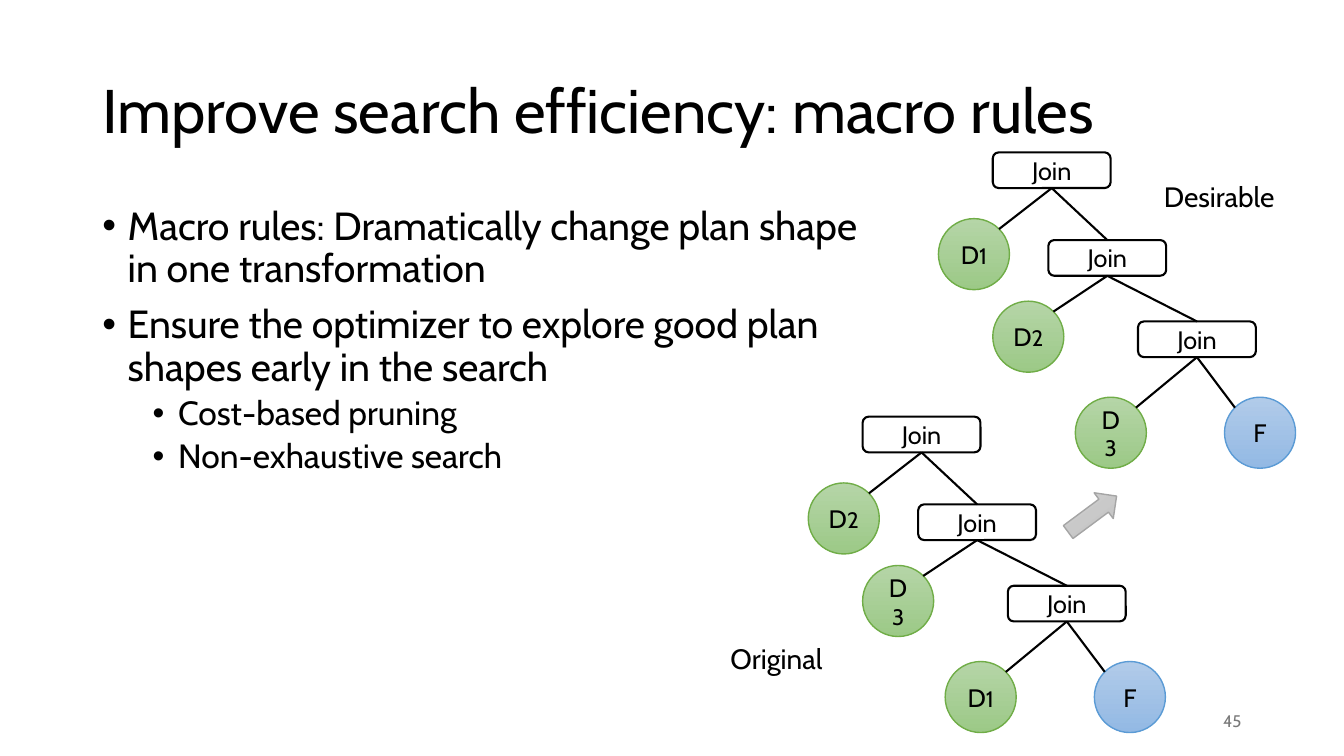
from dataclasses import dataclass
from math import sqrt

from lxml import etree
from pptx import Presentation
from pptx.dml.color import RGBColor
from pptx.enum.shapes import MSO_CONNECTOR, MSO_SHAPE
from pptx.enum.text import MSO_ANCHOR, MSO_AUTO_SIZE, PP_ALIGN
from pptx.oxml.ns import qn
from pptx.util import Cm, Pt

FONT = "Cabin"
BLACK = RGBColor(0x00, 0x00, 0x00)
WHITE = RGBColor(0xFF, 0xFF, 0xFF)
NUMBER_GRAY = RGBColor(0x79, 0x79, 0x79)

LEFT, CENTER, RIGHT = PP_ALIGN.LEFT, PP_ALIGN.CENTER, PP_ALIGN.RIGHT
TOP, MIDDLE = MSO_ANCHOR.TOP, MSO_ANCHOR.MIDDLE
NO_FIT = MSO_AUTO_SIZE.NONE
ROUNDED, CIRCLE = MSO_SHAPE.ROUNDED_RECTANGLE, MSO_SHAPE.FLOWCHART_CONNECTOR
ARROW, STRAIGHT = MSO_SHAPE.RIGHT_ARROW, MSO_CONNECTOR.STRAIGHT


@dataclass(frozen=True)
class Tone:
    top: RGBColor
    bottom: RGBColor
    line: RGBColor


@dataclass(frozen=True)
class Tree:
    dx: float
    dy: float
    leaves: tuple[str, ...]


@dataclass(frozen=True)
class Bullet:
    text: str
    size: int
    indent: float
    before: int


@dataclass(frozen=True)
class Label:
    text: str
    left: float
    top: float
    width: float


GREEN = Tone(RGBColor(0xB5, 0xD5, 0xA7), RGBColor(0x9C, 0xC9, 0x87), RGBColor(0x70, 0xAD, 0x47))
BLUE = Tone(RGBColor(0xB1, 0xCB, 0xE9), RGBColor(0x93, 0xB9, 0xE4), RGBColor(0x5B, 0x9B, 0xD5))
GRAY = Tone(RGBColor(0xD2, 0xD2, 0xD2), RGBColor(0xC0, 0xC0, 0xC0), RGBColor(0xA5, 0xA5, 0xA5))

# Tree geometry in cm; both trees share it, shifted by dx and dy
JOIN_W, JOIN_H, LEAF_D = 2.97, 0.9, 1.79
JOINS = ((25.02, 3.84), (26.42, 6.05), (28.68, 8.1))
LEAVES = ((23.65, 5.51), (25.02, 7.59), (27.1, 10.01), (30.86, 10.01))
LEAF_PARENTS = (0, 1, 2, 2)

TREES = (
    Tree(0, 0, ("D1", "D2", "D3", "F")),
    Tree(-3.28, 6.66, ("D2", "D3", "D1", "F")),
)
BULLETS = (
    Bullet("Macro rules: Dramatically change plan shape in one transformation", 28, 0.64, 10),
    Bullet("Ensure the optimizer to explore good plan shapes early in the search", 28, 0.64, 10),
    Bullet("Cost-based pruning", 24, 1.91, 5),
    Bullet("Non-exhaustive search", 24, 1.91, 5),
)
LABELS = (Label("Desirable", 29.08, 4.39, 3.45), Label("Original", 18.16, 16.03, 2.92))


def add_run(p, text: str, size: int, color: RGBColor = BLACK) -> None:
    r = p.add_run()
    r.text = text
    r.font.name = FONT
    r.font.size = Pt(size)
    r.font.color.rgb = color


def add_text_box(slide, left: float, top: float, width: float, height: float,
                 anchor=TOP, wrap: bool = True):
    tf = slide.shapes.add_textbox(Cm(left), Cm(top), Cm(width), Cm(height)).text_frame
    tf.word_wrap = wrap
    tf.vertical_anchor = anchor
    return tf


def add_bullet(p, bullet: Bullet) -> None:
    p.line_spacing = 0.9
    p.space_before = Pt(bullet.before)
    pPr = p._p.get_or_add_pPr()
    pPr.set("marL", str(Cm(bullet.indent)))
    pPr.set("indent", str(-Cm(0.64)))
    etree.SubElement(pPr, qn("a:buFont")).set("typeface", "Arial")
    etree.SubElement(pPr, qn("a:buChar")).set("char", "•")
    add_run(p, bullet.text, bullet.size)


def add_toned_shape(slide, kind, left: float, top: float, width: float, height: float, tone: Tone):
    sp = slide.shapes.add_shape(kind, Cm(left), Cm(top), Cm(width), Cm(height))
    sp.shadow.inherit = False
    sp.fill.gradient()
    sp.fill.gradient_angle = 270
    for stop, color in zip(sp.fill.gradient_stops, (tone.top, tone.bottom)):
        stop.color.rgb = color
    sp.line.color.rgb = tone.line
    sp.line.width = Pt(1)
    return sp


def add_join(slide, left: float, top: float) -> None:
    sp = slide.shapes.add_shape(ROUNDED, Cm(left), Cm(top), Cm(JOIN_W), Cm(JOIN_H))
    sp.shadow.inherit = False
    sp.fill.solid()
    sp.fill.fore_color.rgb = WHITE
    sp.line.color.rgb = BLACK
    sp.line.width = Pt(1.5)
    tf = sp.text_frame
    tf.vertical_anchor = MIDDLE
    p = tf.paragraphs[0]
    p.alignment = CENTER
    add_run(p, "Join", 18)


def add_leaf(slide, left: float, top: float, name: str) -> None:
    sp = add_toned_shape(slide, CIRCLE, left, top, LEAF_D, LEAF_D, BLUE if name == "F" else GREEN)
    tf = sp.text_frame
    tf.vertical_anchor = MIDDLE
    tf.word_wrap = name == "D3"  # only this label breaks over two lines
    tf.margin_left = tf.margin_right = Cm(0.3)
    p = tf.paragraphs[0]
    p.alignment = CENTER
    add_run(p, name[0], 18)
    if name[1:]:
        add_run(p, name[1:], 16)


def add_edge(slide, x1: float, y1: float, x2: float, y2: float) -> None:
    line = slide.shapes.add_connector(STRAIGHT, Cm(x1), Cm(y1), Cm(x2), Cm(y2))
    line.line.color.rgb = BLACK
    line.line.width = Pt(1.5)
    etree.SubElement(line._element.spPr, qn("a:effectLst"))


def add_tree(slide, tree: Tree) -> None:
    joins = [(x + tree.dx, y + tree.dy) for x, y in JOINS]
    leaves = [(x + tree.dx, y + tree.dy) for x, y in LEAVES]
    for x, y in joins:
        add_join(slide, x, y)
    for (x, y), name in zip(leaves, tree.leaves):
        add_leaf(slide, x, y, name)

    # Edges leave the middle of a join's lower side
    exits = [(x + JOIN_W / 2, y + JOIN_H) for x, y in joins]
    for start, (x, y) in zip(exits, joins[1:]):
        add_edge(slide, *start, x + JOIN_W / 2, y)
    reach = LEAF_D / 2 / sqrt(2)  # leaves are met at 45 degrees
    for parent, (x, y) in zip(LEAF_PARENTS, leaves):
        start = exits[parent]
        cx, cy = x + LEAF_D / 2, y + LEAF_D / 2
        side = reach if cx < start[0] else -reach
        add_edge(slide, *start, cx + side, cy - reach)


def main() -> None:
    prs = Presentation()
    prs.slide_width, prs.slide_height = Cm(33.87), Cm(19.05)
    slide = prs.slides.add_slide(prs.slide_layouts[5])

    # Title
    title = slide.shapes.title
    title.left, title.top, title.width, title.height = Cm(2.33), Cm(1.01), Cm(29.21), Cm(3.68)
    tf = title.text_frame
    tf.auto_size = NO_FIT
    tf.vertical_anchor = MIDDLE
    p = tf.paragraphs[0]
    p.alignment = LEFT
    p.line_spacing = 0.9
    add_run(p, "Improve search efficiency: macro rules", 44)

    # Bullet list
    tf = add_text_box(slide, 2.33, 5.07, 19.58, 12.09)
    for i, bullet in enumerate(BULLETS):
        add_bullet(tf.add_paragraph() if i else tf.paragraphs[0], bullet)

    # Slide number
    p = add_text_box(slide, 23.92, 17.66, 7.62, 1.01, MIDDLE).paragraphs[0]
    p.alignment = RIGHT
    add_run(p, "45", 12, NUMBER_GRAY)

    # Plan trees and their labels
    for tree in TREES:
        add_tree(slide, tree)
    for label in LABELS:
        tf = add_text_box(slide, label.left, label.top, label.width, 1.11, wrap=False)
        add_run(tf.paragraphs[0], label.text, 20)

    # Arrow from the lower tree to the upper one
    arrow = add_toned_shape(slide, ARROW, 26.77, 12.55, 1.52, 0.81, GRAY)
    arrow.rotation = 323.4

    prs.save("out.pptx")


if __name__ == "__main__":
    main()
